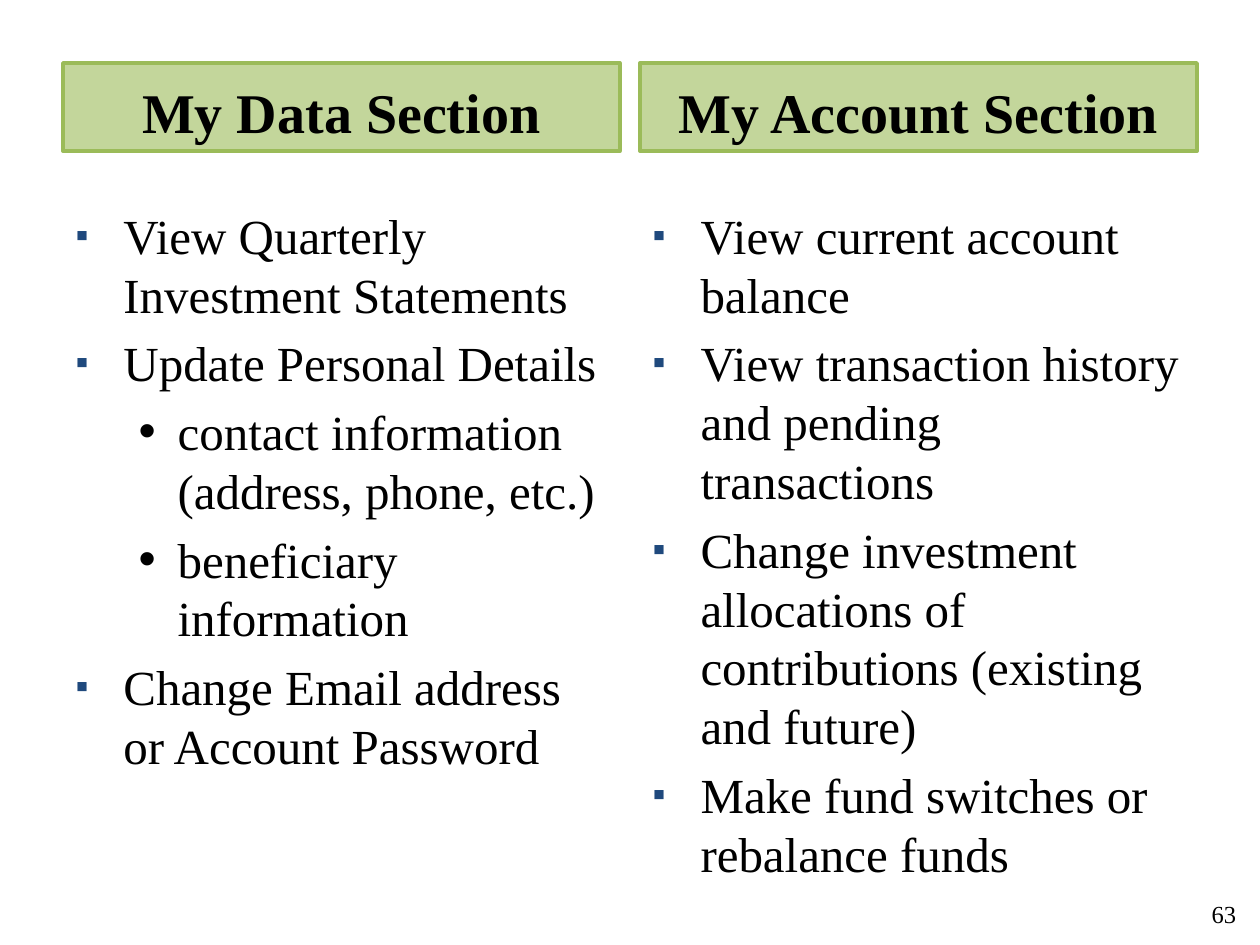
from dataclasses import dataclass

from lxml.etree import SubElement
from pptx import Presentation
from pptx.dml.color import RGBColor
from pptx.enum.text import MSO_ANCHOR, MSO_AUTO_SIZE, PP_ALIGN
from pptx.oxml.ns import qn
from pptx.util import Inches, Pt

FONT = "Times New Roman"
BLACK = "000000"
MARGIN, COLUMN_WIDTH = 0.5, 4.42


@dataclass(frozen=True)
class Bullet:
    char: str
    color: str
    size: int
    left: float
    hanging: float


@dataclass(frozen=True)
class Section:
    heading: str
    items: tuple[tuple[int, str], ...]
    heading_idx: int
    list_idx: int
    left: float


BULLETS = (
    Bullet("▪", "1F497D", 75, 0.38, 0.38),
    Bullet("•", BLACK, 100, 0.81, 0.31),
)

SECTIONS = (
    Section("My Data Section", (
        (0, "View Quarterly Investment Statements"),
        (0, "Update Personal Details"),
        (1, "contact information (address, phone, etc.)"),
        (1, "beneficiary information"),
        (0, "Change Email address or Account Password"),
    ), 1, 2, MARGIN),
    Section("My Account Section", (
        (0, "View current account balance"),
        (0, "View transaction history and pending transactions"),
        (0, "Change investment allocations of contributions (existing and future)"),
        (0, "Make fund switches or rebalance funds"),
    ), 3, 4, 10 - MARGIN - COLUMN_WIDTH),
)


def rgb(color: str) -> RGBColor:
    return RGBColor.from_string(color)


def place(sp, left: float, top: float, width: float, height: float) -> None:
    sp.left, sp.top = Inches(left), Inches(top)
    sp.width, sp.height = Inches(width), Inches(height)


def format_runs(p, size: int, bold: bool = False) -> None:
    for r in p.runs:
        r.font.name = FONT
        r.font.size = Pt(size)
        r.font.bold = bold
        r.font.color.rgb = rgb(BLACK)


def add_bullet(p, bullet: Bullet) -> None:
    pPr = p._p.get_or_add_pPr()
    pPr.set("marL", str(Inches(bullet.left)))
    pPr.set("indent", str(-Inches(bullet.hanging)))
    color = SubElement(pPr, qn("a:buClr"))
    SubElement(color, qn("a:srgbClr"), val=bullet.color)
    SubElement(pPr, qn("a:buSzPct"), val=str(bullet.size * 1000))
    SubElement(pPr, qn("a:buFont"), typeface="Arial")
    SubElement(pPr, qn("a:buChar"), char=bullet.char)


def draw_heading(sp, section: Section) -> None:
    place(sp, section.left, 0.5, COLUMN_WIDTH, 0.7)
    sp.fill.solid()
    sp.fill.fore_color.rgb = rgb("C3D69B")
    sp.line.color.rgb = rgb("9BBB59")
    sp.line.width = Pt(2)
    tf = sp.text_frame
    tf.text = section.heading
    tf.vertical_anchor = MSO_ANCHOR.BOTTOM
    tf.auto_size = MSO_AUTO_SIZE.NONE
    p = tf.paragraphs[0]
    p.alignment = PP_ALIGN.CENTER
    p.space_before = Pt(0)
    format_runs(p, 32, bold=True)


def draw_list(sp, section: Section) -> None:
    place(sp, section.left, 1.58, COLUMN_WIDTH, 5.12)
    tf = sp.text_frame
    tf.text = "\n".join(text for _, text in section.items)
    tf.auto_size = MSO_AUTO_SIZE.NONE
    for i, (p, (level, _)) in enumerate(zip(tf.paragraphs, section.items)):
        p.level = level
        p.space_before = Pt(5.6 if i else 0)
        add_bullet(p, BULLETS[level])
        format_runs(p, 28)


def draw_page_number(slide, number: str) -> None:
    sp = slide.shapes.add_textbox(Inches(9.48), Inches(7.09), Inches(0.43), Inches(0.33))
    tf = sp.text_frame
    tf.text = number
    tf.word_wrap = False
    tf.vertical_anchor = MSO_ANCHOR.MIDDLE
    p = tf.paragraphs[0]
    p.alignment = PP_ALIGN.RIGHT
    format_runs(p, 14)


def main() -> None:
    prs = Presentation()
    prs.slide_width, prs.slide_height = Inches(10), Inches(7.5)
    s = prs.slides.add_slide(prs.slide_layouts[4])
    placeholders = {sp.placeholder_format.idx: sp for sp in s.placeholders}
    title = placeholders[0]._element
    title.getparent().remove(title)
    draw_page_number(s, "63")
    for section in SECTIONS:
        draw_list(placeholders[section.list_idx], section)
        draw_heading(placeholders[section.heading_idx], section)
    prs.save("out.pptx")


if __name__ == "__main__":
    main()
